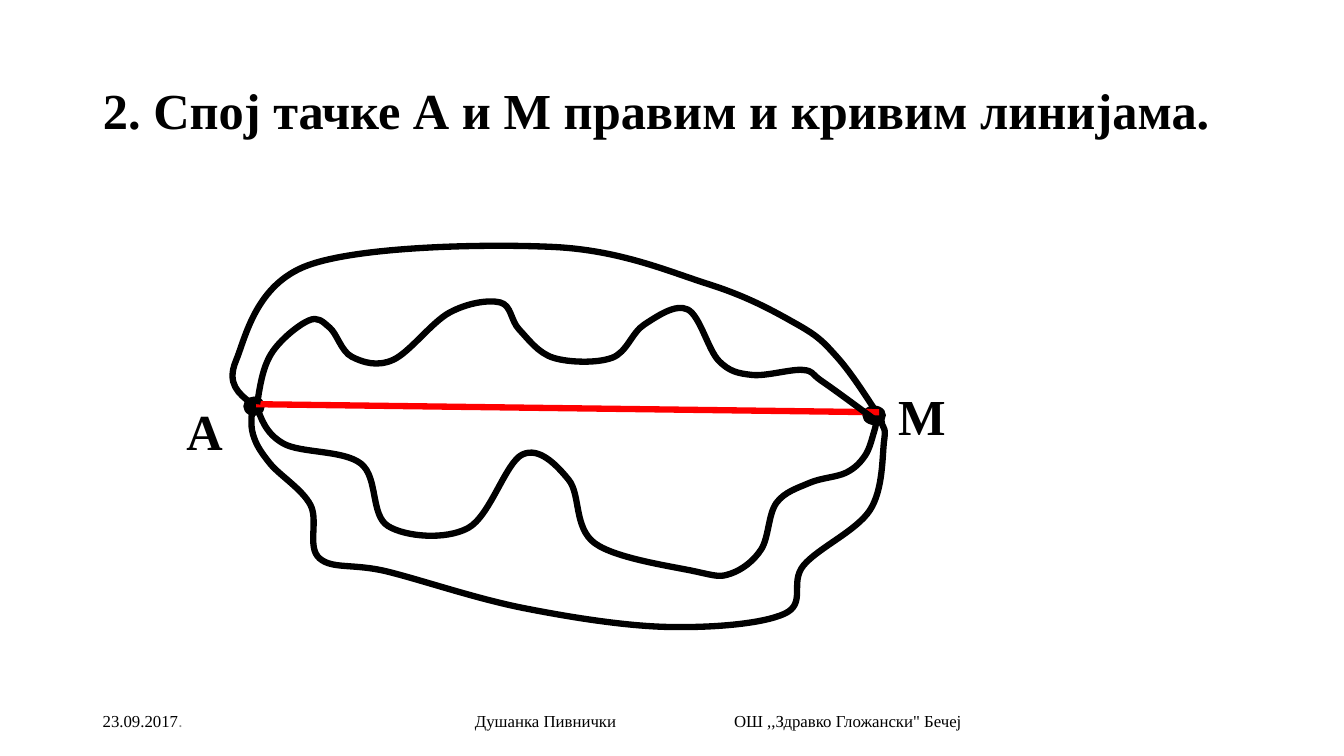
import pptx
import pptx.util
import pptx.dml.color
import pptx.enum.shapes
import pptx.enum.text
import pptx.oxml
import pptx.oxml.ns
import lxml.etree

Inches = pptx.util.Inches
Pt = pptx.util.Pt
qn = pptx.oxml.ns.qn
ANCHOR = pptx.enum.text.MSO_ANCHOR

COLOURS = {"ink": "000000", "straight": "FF0000", "faint": "8C8C8C"}
SERIF = "Times New Roman"
HEADING = {"name": SERIF, "size": Pt(36), "bold": True}
SMALL = {"name": SERIF, "size": Pt(12), "bold": False}
SMALL_DOT = {"name": "Calibri", "size": Pt(12), "bold": False}
CURVE_WIDTH = 4.5
UNITS_PER_INCH = 1000

LOWER_WAVE = [
    (0.54, 2.01), (0.81, 2.4), (1.58, 2.6), (1.85, 3.22), (2.64, 3.24), (3.18, 2.51),
    (3.64, 2.76), (3.9, 3.39), (4.9, 3.67), (5.25, 3.69), (5.55, 3.45), (5.7, 2.99),
    (6.03, 2.79), (6.39, 2.69), (6.58, 2.52), (6.67, 2.28), (6.69, 2.18), (6.69, 2.13),
]
LOWER_ARC = [
    (0.51, 2.01), (0.51, 2.31), (0.68, 2.6), (1.08, 3.01), (1.17, 3.54), (1.84, 3.67),
    (3.18, 4.03), (4.62, 4.22), (5.78, 4.09), (5.97, 3.61), (6.63, 3.06), (6.77, 2.37),
    (6.75, 2.21), (6.72, 2.09),
]
UPPER_ARC = [
    (0.49, 2), (0.34, 1.58), (1.06, 0.63), (3.49, 0.45), (5.03, 0.82), (5.91, 1.22),
    (6.3, 1.54), (6.7, 2.1),
]
UPPER_WAVE = [
    (0.55, 2.01), (0.69, 1.51), (1.06, 1.18), (1.27, 1.25), (1.49, 1.54), (1.9, 1.57),
    (2.46, 1.1), (2.96, 1), (3.15, 1.27), (3.49, 1.55), (4.07, 1.55), (4.39, 1.22),
    (4.82, 1.07), (5.13, 1.58), (5.46, 1.72), (5.96, 1.67), (6.15, 1.78), (6.66, 2.15),
]
POINTS = {"A": (0.42, 1.94, 0.2, 0.18), "M": (6.56, 2.03, 0.22, 0.18)}
LABELS = {"A": (-0.25, 1.99, 0.7, 0.5), "M": (6.81, 1.84, 0.7, 0.5)}


def colour(name):
    return pptx.dml.color.RGBColor.from_string(COLOURS[name])


def apply(target, values):
    for key, value in values.items():
        setattr(target, key, value)


def add_span(para, text, font, ink="ink"):
    span = para.add_run()
    span.text = text
    apply(span.font, font)
    span.font.color.rgb = colour(ink)


def format_frame(frame, anchor):
    apply(frame, {
        "word_wrap": True,
        "auto_size": pptx.enum.text.MSO_AUTO_SIZE.NONE,
        "vertical_anchor": anchor,
    })
    return frame.paragraphs[0]


def add_text_box(page, box, anchor):
    text_box = page.shapes.add_textbox(*map(Inches, box))
    return text_box.text_frame, format_frame(text_box.text_frame, anchor)


def draw_line(shape, ink, width):
    shape.line.color.rgb = colour(ink)
    shape.line.width = Pt(width)


def smooth(shape):
    outline = next(shape.element.iter(qn("a:path")))
    knots = [(int(pt.get("x")), int(pt.get("y"))) for pt in outline.iter(qn("a:pt"))]
    last = len(knots) - 1

    def handle(index, side):
        before, after = knots[max(index - 1, 0)], knots[min(index + 1, last)]
        return tuple(k + side * (b - a) / 6 for k, a, b in zip(knots[index], before, after))

    def middle(first, second):
        return tuple((a + b) / 2 for a, b in zip(first, second))

    for segment in outline.findall(qn("a:lnTo")):
        outline.remove(segment)
    for index in range(last):
        start, end = handle(index, 1), handle(index + 1, -1)
        if index == 0:
            start = middle(knots[0], end)
        if index == last - 1:
            end = middle(start, knots[last])
        bezier = lxml.etree.SubElement(outline, qn("a:cubicBezTo"))
        for x, y in (start, end, knots[index + 1]):
            lxml.etree.SubElement(bezier, qn("a:pt"), x=str(round(x)), y=str(round(y)))


def add_curve(page, left, top, knots):
    scaled = [(round(x * UNITS_PER_INCH), round(y * UNITS_PER_INCH)) for x, y in knots]
    builder = page.shapes.build_freeform(*scaled[0], scale=Inches(1) / UNITS_PER_INCH)
    builder.add_line_segments(scaled[1:], close=False)
    curve = builder.convert_to_shape(Inches(left), Inches(top))
    smooth(curve)
    curve.shadow.inherit = False
    curve.fill.background()
    draw_line(curve, "ink", CURVE_WIDTH)


def add_title(page, box):
    title = page.shapes.title
    apply(title, dict(zip(("left", "top", "width", "height"), map(Inches, box))))
    para = format_frame(title.text_frame, ANCHOR.MIDDLE)
    apply(para, {"alignment": pptx.enum.text.PP_ALIGN.LEFT, "line_spacing": 0.9})
    add_span(para, "2. Спој тачке А и М правим и кривим линијама.", HEADING)


def add_figure(page, left, top):
    def placed(box):
        return left + box[0], top + box[1], box[2], box[3]

    for box in reversed(POINTS.values()):
        dot = page.shapes.add_shape(
            pptx.enum.shapes.MSO_SHAPE.OVAL, *map(Inches, placed(box)))
        dot.shadow.inherit = False
        dot.fill.solid()
        dot.fill.fore_color.rgb = colour("ink")
        draw_line(dot, "ink", 1)

    for knots in (LOWER_WAVE, LOWER_ARC, UPPER_ARC):
        add_curve(page, left, top, knots)

    straight = page.shapes.add_connector(
        pptx.enum.shapes.MSO_CONNECTOR.STRAIGHT,
        Inches(left + 0.54), Inches(top + 2.01), Inches(left + 6.72), Inches(top + 2.09))
    draw_line(straight, "straight", CURVE_WIDTH)
    lxml.etree.SubElement(straight.element.spPr, qn("a:effectLst"))

    add_curve(page, left, top, UPPER_WAVE)

    for letter, box in LABELS.items():
        frame, para = add_text_box(page, placed(box), ANCHOR.TOP)
        apply(para, {"line_spacing": 0.9, "space_before": Pt(10)})
        add_span(para, letter, HEADING)


def add_footer(page, left, top, height):
    frame, date = add_text_box(page, (left, top, 3, height), ANCHOR.MIDDLE)
    add_span(date, "23.09.2017", SMALL)
    add_span(date, ".", SMALL_DOT, "faint")

    frame, credit = add_text_box(page, (left + 3.5, top, 5.43, height), ANCHOR.MIDDLE)
    frame.margin_left = Inches(0.29)
    add_span(credit, "Душанка Пивнички\tОШ ,,Здравко Гложански\" Бечеј", SMALL)
    tabs = lxml.etree.SubElement(credit._p.get_or_add_pPr(), qn("a:tabLst"))
    lxml.etree.SubElement(tabs, qn("a:tab"), pos=str(Inches(2.57)), algn="l")


def main():
    deck = pptx.Presentation()
    apply(deck, {"slide_width": Inches(13.33), "slide_height": Inches(7.5)})
    page = deck.slides.add_slide(deck.slide_layouts[5])
    add_title(page, (0.92, 0.4, 11.5, 1.45))
    add_footer(page, 0.92, 6.95, 0.4)
    add_figure(page, 2, 2)
    deck.save("out.pptx")


if __name__ == "__main__":
    main()
